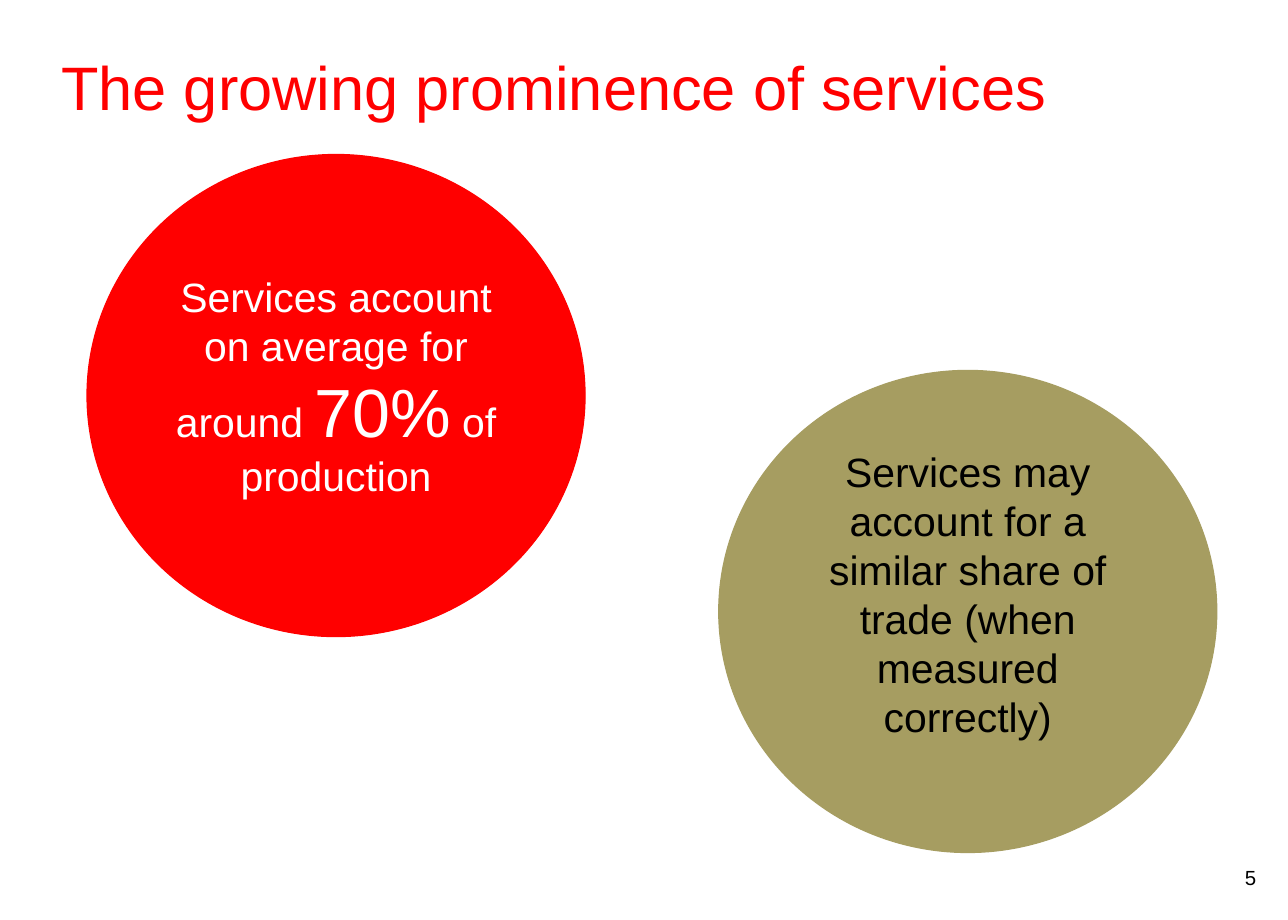
from dataclasses import dataclass

from pptx import Presentation
from pptx.dml.color import RGBColor
from pptx.enum.shapes import MSO_SHAPE
from pptx.enum.text import MSO_ANCHOR, MSO_AUTO_SIZE, PP_ALIGN
from pptx.slide import Slide
from pptx.text.text import TextFrame
from pptx.util import Inches, Pt

ELLIPSE = MSO_SHAPE.OVAL
TOP, MIDDLE = MSO_ANCHOR.TOP, MSO_ANCHOR.MIDDLE
LEFT, CENTER, RIGHT = PP_ALIGN.LEFT, PP_ALIGN.CENTER, PP_ALIGN.RIGHT
NO_FIT = MSO_AUTO_SIZE.NONE

SLIDE_WIDTH, SLIDE_HEIGHT = Inches(10.5), Inches(7.5)
TITLE_ONLY = 5
FONT = "Arial"
COLORS = {"red": "FF0000", "olive": "A69D61", "white": "FFFFFF", "black": "000000"}
CIRCLE_WIDTH, CIRCLE_HEIGHT = Inches(4.06), Inches(3.93)


@dataclass(frozen=True)
class Phrase:
    text: str
    size: float = 24


@dataclass(frozen=True)
class Claim:
    left: float
    top: float
    fill: str
    color: str
    lift: float
    phrases: tuple[Phrase, ...]


CLAIMS = (
    Claim(5.86, 3.02, "olive", "black", 0.34, (
        Phrase("Services may account for a similar share of trade (when measured correctly)"),
    )),
    Claim(0.71, 1.26, "red", "white", 0.21, (
        Phrase("Services account on average for around "),
        Phrase("70%", 40),
        Phrase(" of production"),
    )),
)


def rgb(name: str) -> RGBColor:
    return RGBColor.from_string(COLORS[name])


def write(frame: TextFrame, *phrases: Phrase, color: str, align: PP_ALIGN,
          anchor: MSO_ANCHOR = TOP,
          insets: tuple[float, float, float, float] = (0.1, 0.05, 0.1, 0.05)) -> None:
    frame.word_wrap = True
    frame.auto_size = NO_FIT
    frame.vertical_anchor = anchor
    (frame.margin_left, frame.margin_top,
     frame.margin_right, frame.margin_bottom) = map(Inches, insets)
    paragraph = frame.paragraphs[0]
    paragraph.alignment = align
    for phrase in phrases:
        run = paragraph.add_run()
        run.text = phrase.text
        run.font.name = FONT
        run.font.size = Pt(phrase.size)
        run.font.color.rgb = rgb(color)


def add_title(slide: Slide) -> None:
    title = slide.shapes.title
    title.left, title.top = Inches(0.5), Inches(0.4)
    title.width, title.height = Inches(9.49), Inches(0.83)
    write(title.text_frame, Phrase("The growing prominence of services", 36),
          color="red", align=LEFT, insets=(0, 0, 0, 0))


def add_page_number(slide: Slide) -> None:
    page_number = slide.shapes.add_textbox(
        Inches(7.89), Inches(7), Inches(2.45), Inches(0.4))
    write(page_number.text_frame, Phrase("5", 12), color="black", align=RIGHT)


def add_claim(slide: Slide, claim: Claim) -> None:
    circle = slide.shapes.add_shape(
        ELLIPSE, Inches(claim.left), Inches(claim.top), CIRCLE_WIDTH, CIRCLE_HEIGHT)
    circle.shadow.inherit = False
    circle.fill.solid()
    circle.fill.fore_color.rgb = rgb(claim.fill)
    circle.line.color.rgb = rgb(claim.fill)
    circle.line.width = Pt(0.75)
    write(circle.text_frame, *claim.phrases, color=claim.color, align=CENTER,
          anchor=MIDDLE, insets=(0.1, 0.05, 0.1, claim.lift))


def main() -> None:
    deck = Presentation()
    deck.slide_width, deck.slide_height = SLIDE_WIDTH, SLIDE_HEIGHT
    slide = deck.slides.add_slide(deck.slide_layouts[TITLE_ONLY])
    add_title(slide)
    add_page_number(slide)
    for claim in CLAIMS:
        add_claim(slide, claim)
    deck.save("out.pptx")


if __name__ == "__main__":
    main()
